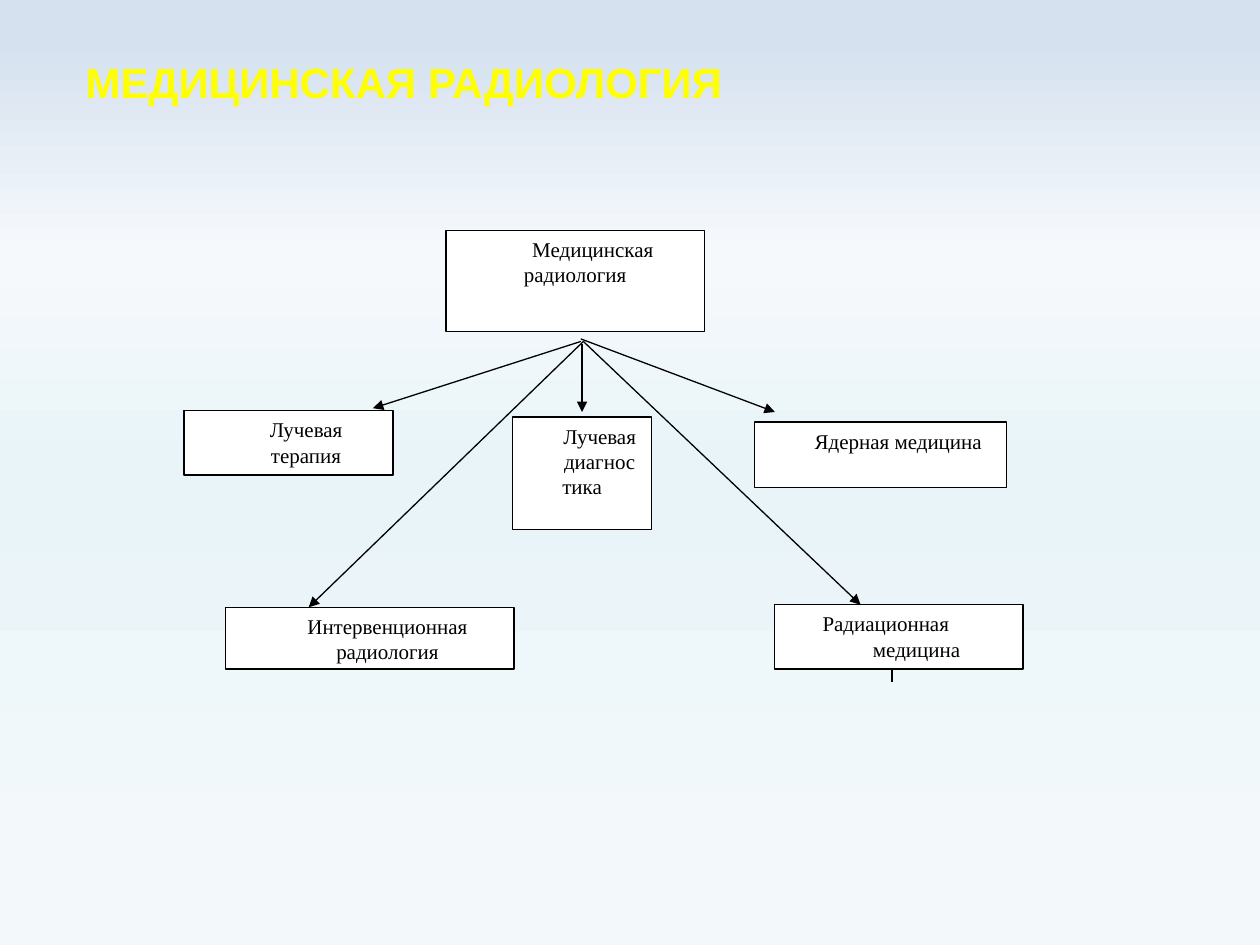
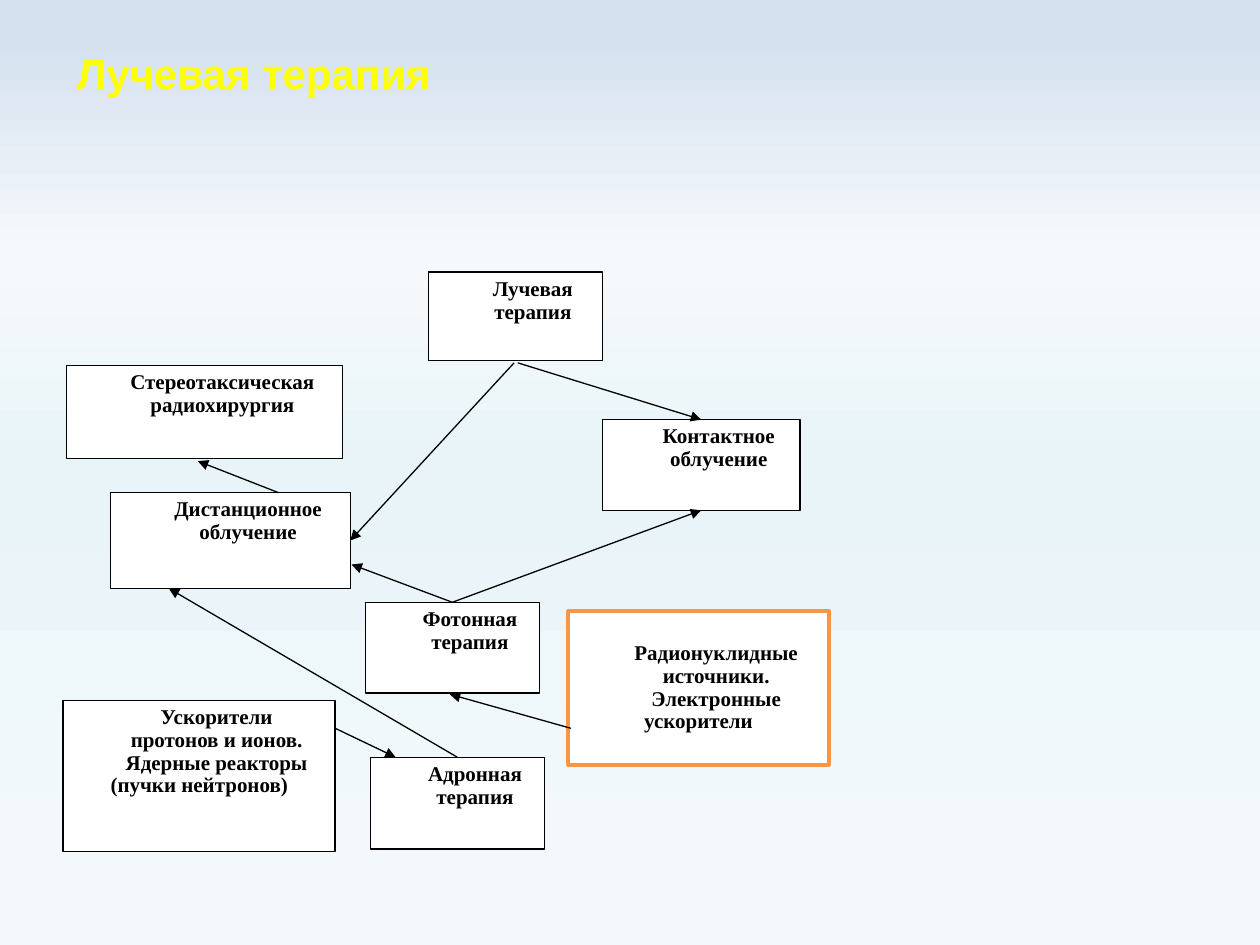
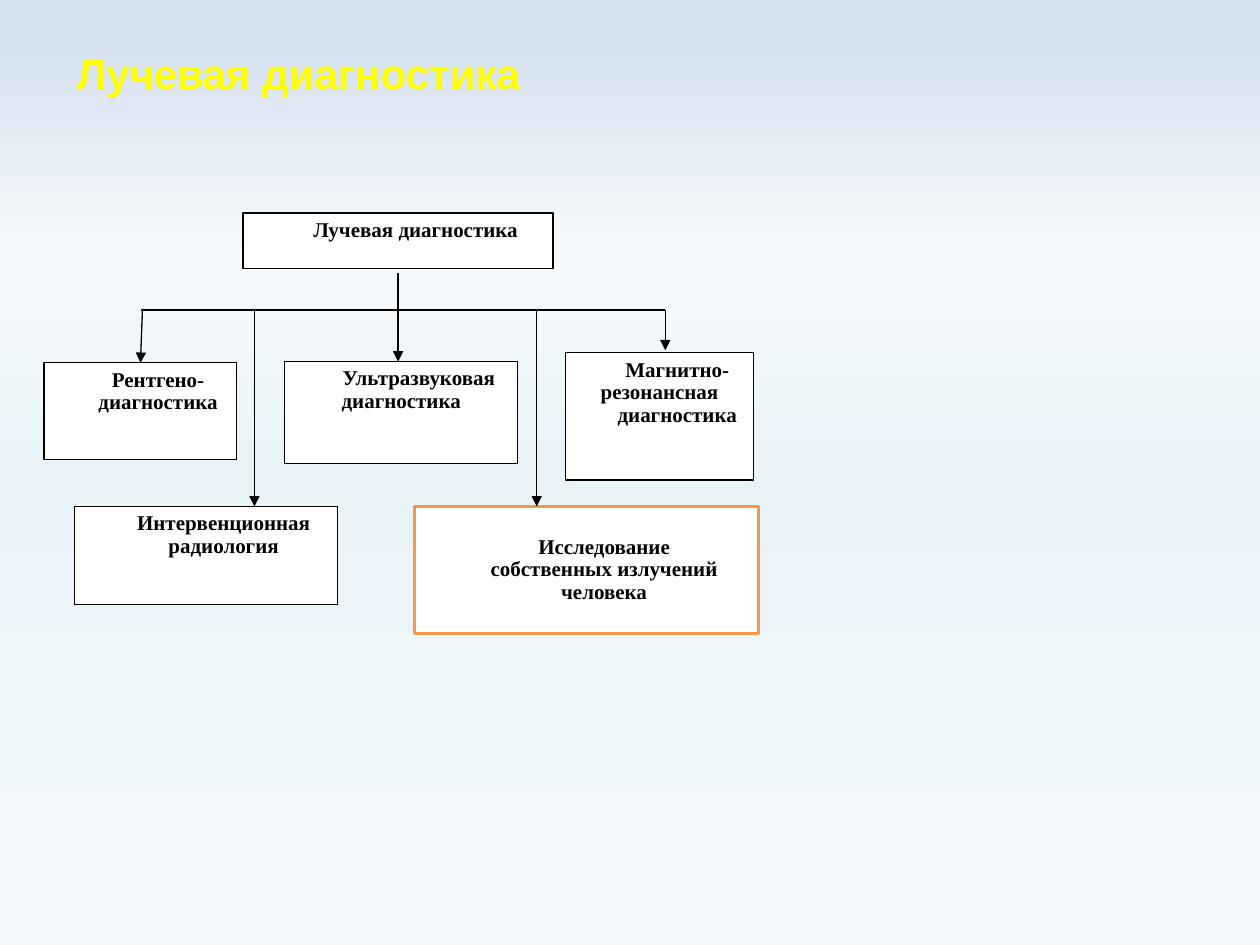
"""Build three slides of box-and-arrow schemes on medical radiology."""
import dataclasses

import pptx
import pptx.dml.color
import pptx.enum.shapes
import pptx.enum.text
import pptx.oxml
import pptx.oxml.ns
import pptx.util

Inches = pptx.util.Inches
Align = pptx.enum.text.PP_ALIGN
Anchor = pptx.enum.text.MSO_ANCHOR


@dataclasses.dataclass(frozen=True)
class Theme:
    background: tuple = ((4, "D5E1EF"), (27, "F6F9FC"), (50, "E8F4F8"), (92, "F3F9FB"))
    title_color: str = "FFFF00"
    ink: str = "000000"
    paper: str = "FFFFFF"
    accent: str = "F79646"
    title_font: str = "Arial"
    body_font: str = "Times New Roman"
    title_size: int = 24
    body_size: int = 12
    thin: float = 0.75
    thick: float = 2
    first_line: float = 0.28


THEME = Theme()
JOIN_TOLERANCE = 0.015

SLIDES = [
    {
        "title": "МЕДИЦИНСКАЯ РАДИОЛОГИЯ",
        "title_at": (0.67, 0.43, 8.66, 0.84),
        "bold": False,
        "spacing": 1.0,
        "back_lines": [((7.08, 5.04), (7.08, 5.41))],
        "boxes": [
            ((3.54, 1.83, 2.05, 0.8), ["Медицинская радиология"], {}),
            ((1.46, 3.26, 1.66, 0.51), ["Лучевая", "терапия"], {}),
            ((4.07, 3.31, 1.1, 0.89), ["Лучевая", "диагностика"], {}),
            ((5.99, 3.35, 2, 0.52), ["Ядерная медицина"], {}),
            ((1.79, 4.82, 2.29, 0.49), ["Интервенционная", "радиология"], {}),
            ((6.15, 4.8, 1.97, 0.51), ["Радиационная", "медицина"], {"justified": 0}),
        ],
        "arrows": [
            ((4.63, 2.71), (2.45, 4.82)),
            ((4.63, 2.71), (6.83, 4.8)),
            ((4.62, 2.73), (4.62, 3.27)),
            ((4.61, 2.71), (2.96, 3.24)),
            ((4.61, 2.69), (6.15, 3.27)),
        ],
    },
    {
        "title": "Лучевая терапия",
        "title_at": (0.6, 0.36, 8.66, 0.42),
        "bold": True,
        "spacing": 0.9,
        "back_lines": [],
        "boxes": [
            ((3.4, 2.16, 1.38, 0.7), ["Лучевая", "терапия"], {}),
            ((0.88, 3.91, 1.9, 0.76), ["Дистанционное", "облучение"], {}),
            ((4.78, 3.33, 1.57, 0.72), ["Контактное", "облучение"], {}),
            ((2.9, 4.78, 1.38, 0.72), ["Фотонная", "терапия"], {}),
            ((2.94, 6.01, 1.38, 0.73), ["Адронная", "терапия"], {}),
            ((0.53, 2.9, 2.19, 0.74), ["Стереотаксическая", "радиохирургия"], {}),
            ((0.5, 5.56, 2.16, 1.2),
             ["Ускорители", "протонов и ионов.", "Ядерные реакторы", "(пучки нейтронов)"],
             {"justified": 3}),
            ((4.51, 4.85, 2.07, 1.22),
             ["Радионуклидные", "источники.", "Электронные ускорители"], {"accent": True}),
        ],
        "arrows": [
            ((4.11, 2.88), (5.57, 3.33)),
            ((4.08, 2.88), (2.79, 4.28)),
            ((2.21, 3.91), (1.57, 3.66)),
            ((3.59, 4.78), (5.57, 4.05)),
            ((3.59, 4.78), (2.79, 4.48)),
            ((4.53, 5.78), (3.57, 5.51)),
            ((3.63, 6.01), (1.34, 4.67)),
            ((2.66, 5.78), (3.14, 6.01)),
        ],
    },
    {
        "title": "Лучевая диагностика",
        "title_at": (0.6, 0.36, 8.66, 0.42),
        "bold": True,
        "spacing": 0.9,
        "back_lines": [((1.12, 2.46), (5.28, 2.46))],
        "boxes": [
            ((1.93, 1.69, 2.46, 0.44), ["Лучевая диагностика"], {}),
            ((2.26, 2.87, 1.85, 0.81), ["Ультразвуковая диагностика"], {}),
            ((4.49, 2.8, 1.49, 1.01), ["Магнитно-резонансная", "диагностика"], {}),
            ((0.59, 4.02, 2.09, 0.78), ["Интервенционная", "радиология"], {}),
            ((0.35, 2.88, 1.53, 0.77), ["Рентгено-", "диагностика"], {}),
            ((3.29, 4.02, 2.73, 1.01),
             ["Исследование", "собственных излучений", "человека"], {"accent": True}),
        ],
        "arrows": [
            ((3.16, 2.17), (3.16, 2.87)),
            ((1.13, 2.47), (1.12, 2.88)),
            ((5.28, 2.46), (5.28, 2.78)),
            ((2.02, 2.46), (2.02, 4.02)),
            ((4.26, 2.47), (4.26, 4.02)),
        ],
    },
]


def rgb(value):
    return pptx.dml.color.RGBColor.from_string(value)


def write_text(text_frame, lines, *, font, size, color, bold, align, justified=None,
               indent=0, spacing=1.0, anchor=Anchor.TOP, insets=(0.1, 0.05, 0.1, 0.05)):
    text_frame.text = "\n".join(lines)
    text_frame.word_wrap = True
    text_frame.auto_size = pptx.enum.text.MSO_AUTO_SIZE.NONE
    text_frame.vertical_anchor = anchor
    for side, inset in zip(("left", "top", "right", "bottom"), insets):
        setattr(text_frame, f"margin_{side}", Inches(inset))
    for index, paragraph in enumerate(text_frame.paragraphs):
        paragraph.alignment = Align.JUSTIFY if index == justified else align
        paragraph.line_spacing = spacing
        paragraph.space_before = pptx.util.Pt(0)
        properties = paragraph._p.get_or_add_pPr()
        properties.set("marL", "0")
        properties.set("indent", str(Inches(indent)))
        paragraph.font.name = font
        paragraph.font.size = pptx.util.Pt(size)
        paragraph.font.bold = bold
        paragraph.font.color.rgb = rgb(color)


def set_background(master):
    fill = master.background.fill
    fill.gradient()
    fill.gradient_angle = 270
    stops = next(master.element.iter(pptx.oxml.ns.qn("a:gsLst")))
    for stop in list(stops):
        stops.remove(stop)
    for percent, color in THEME.background:
        stops.append(pptx.oxml.parse_xml(
            f'<a:gs {pptx.oxml.ns.nsdecls("a")} pos="{percent * 1000}">'
            f'<a:srgbClr val="{color}"/></a:gs>'))


def set_title(slide, text, position):
    title = slide.shapes.title
    title.left, title.top, title.width, title.height = map(Inches, position)
    write_text(title.text_frame, [text], font=THEME.title_font, size=THEME.title_size,
               color=THEME.title_color, bold=True, align=Align.LEFT,
               insets=(0.01, 0.02, 0, 0))


def add_box(slide, position, lines, bold, spacing, accent=False, justified=None):
    box = slide.shapes.add_shape(pptx.enum.shapes.MSO_SHAPE.RECTANGLE, *map(Inches, position))
    box.shadow.inherit = False
    box.fill.solid()
    box.fill.fore_color.rgb = rgb(THEME.paper)
    box.line.color.rgb = rgb(THEME.accent if accent else THEME.ink)
    box.line.width = pptx.util.Pt(THEME.thick if accent else THEME.thin)
    write_text(box.text_frame, lines, font=THEME.body_font, size=THEME.body_size,
               color=THEME.ink, bold=bold, align=Align.CENTER, justified=justified,
               indent=THEME.first_line, spacing=spacing,
               anchor=Anchor.MIDDLE if accent else Anchor.TOP)
    return box


def find_joint(point, boxes):
    x, y = map(Inches, point)
    reach = Inches(JOIN_TOLERANCE)
    for box in boxes:
        middle_x, middle_y = box.left + box.width // 2, box.top + box.height // 2
        sides = ((middle_x, box.top), (box.left, middle_y),
                 (middle_x, box.top + box.height), (box.left + box.width, middle_y))
        for number, (side_x, side_y) in enumerate(sides):
            if abs(x - side_x) <= reach and abs(y - side_y) <= reach:
                return box, number
    return None


def add_line(slide, start, end, boxes=(), arrow=False):
    line = slide.shapes.add_connector(pptx.enum.shapes.MSO_CONNECTOR.STRAIGHT,
                                      *map(Inches, start + end))
    line.line.color.rgb = rgb(THEME.ink)
    line.line.width = pptx.util.Pt(THEME.thin)
    namespace = pptx.oxml.ns.nsdecls("a")
    if arrow:
        line.line._get_or_add_ln().append(
            pptx.oxml.parse_xml(f'<a:tailEnd {namespace} type="triangle"/>'))
    line._element.spPr.append(pptx.oxml.parse_xml(f"<a:effectLst {namespace}/>"))
    for point, connect in ((start, line.begin_connect), (end, line.end_connect)):
        joint = find_joint(point, boxes)
        if joint:
            connect(*joint)


def main():
    presentation = pptx.Presentation()
    presentation.slide_width, presentation.slide_height = Inches(10), Inches(7.5)
    set_background(presentation.slide_master)
    for content in SLIDES:
        slide = presentation.slides.add_slide(presentation.slide_layouts[5])
        set_title(slide, content["title"], content["title_at"])
        for start, end in content["back_lines"]:
            add_line(slide, start, end)
        boxes = [add_box(slide, position, lines, content["bold"], content["spacing"], **options)
                 for position, lines, options in content["boxes"]]
        for start, end in content["arrows"]:
            add_line(slide, start, end, boxes, arrow=True)
    presentation.save("out.pptx")


if __name__ == "__main__":
    main()
